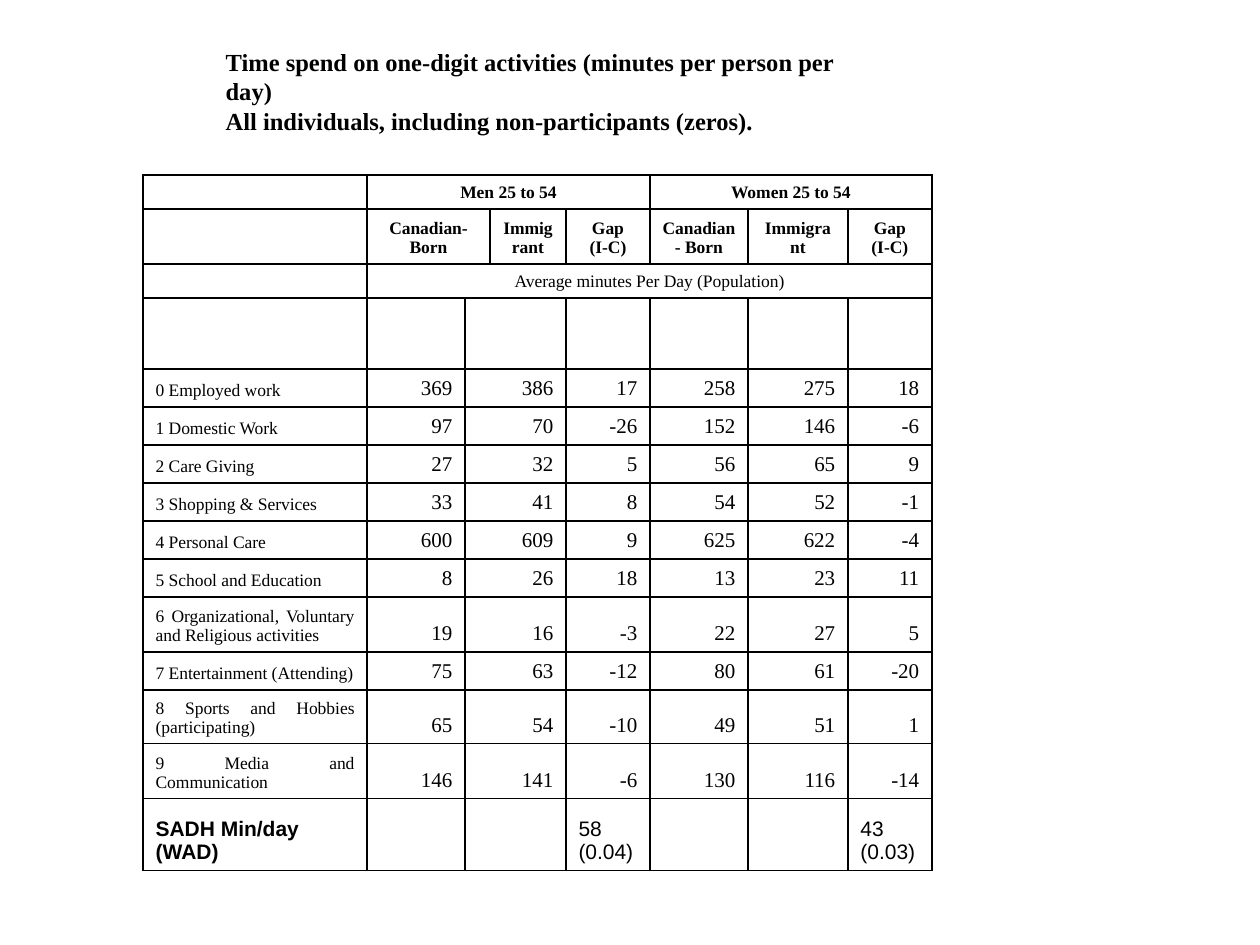
from lxml import etree
from pptx import Presentation
from pptx.dml.color import RGBColor
from pptx.enum.text import MSO_ANCHOR, MSO_AUTO_SIZE, PP_ALIGN
from pptx.oxml.ns import qn
from pptx.util import Pt

PX = 914400 // 126
BLACK = RGBColor(0x00, 0x00, 0x00)
SERIF, SANS = "Times New Roman", "Arial"
LEFT, CENTER, RIGHT, JUSTIFY = PP_ALIGN.LEFT, PP_ALIGN.CENTER, PP_ALIGN.RIGHT, PP_ALIGN.JUSTIFY

COL_WIDTHS = [224, 98, 25, 76, 84, 98, 100, 84]
ROW_HEIGHTS = [33, 55, 34, 71] + [38] * 6 + [55, 38, 54, 55, 72]
VALUE_COLS = [1, 2, 4, 5, 6, 7]
ACTIVITIES = [
    ("0 Employed work", 369, 386, 17, 258, 275, 18),
    ("1 Domestic Work", 97, 70, -26, 152, 146, -6),
    ("2 Care Giving", 27, 32, 5, 56, 65, 9),
    ("3 Shopping & Services", 33, 41, 8, 54, 52, -1),
    ("4 Personal Care", 600, 609, 9, 625, 622, -4),
    ("5 School and Education", 8, 26, 18, 13, 23, 11),
    ("6 Organizational, Voluntary and Religious activities", 19, 16, -3, 22, 27, 5),
    ("7 Entertainment (Attending)", 75, 63, -12, 80, 61, -20),
    ("8 Sports and Hobbies (participating)", 65, 54, -10, 49, 51, 1),
    ("9 Media and Communication", 146, 141, -6, 130, 116, -14),
]
FIRST = 4
LAST = FIRST + len(ACTIVITIES)


def write(tf, text, size=10, bold=False, font=SERIF, align=CENTER, before=0):
    """Fill a text frame, one paragraph for each line of text."""
    for i, line in enumerate(text.split("\n")):
        p = tf.paragraphs[0] if i == 0 else tf.add_paragraph()
        p.alignment = align
        p.space_before = Pt(before)
        r = p.add_run()
        r.text = line
        r.font.size = Pt(size)
        r.font.bold = bold
        r.font.name = font
        r.font.color.rgb = BLACK


def add_borders(cell):
    tc_pr = cell._tc.get_or_add_tcPr()
    for i, side in enumerate(("lnL", "lnR", "lnT", "lnB")):
        ln = etree.Element(qn("a:" + side), w=str(Pt(1)))
        fill = etree.SubElement(ln, qn("a:solidFill"))
        etree.SubElement(fill, qn("a:srgbClr"), val=str(BLACK))
        tc_pr.insert(i, ln)


prs = Presentation()
prs.slide_width, prs.slide_height = 1260 * PX, 945 * PX
s = prs.slides.add_slide(prs.slide_layouts[5])

title = s.shapes.title
title.left, title.top, title.width, title.height = 213 * PX, 55 * PX, 685 * PX, 110 * PX
tf = title.text_frame
tf.word_wrap = True
tf.auto_size = MSO_AUTO_SIZE.NONE
tf.vertical_anchor = MSO_ANCHOR.MIDDLE
tf.margin_right = 18 * PX
tf.margin_bottom = 44 * PX
write(tf, "Time spend on one-digit activities (minutes per person per day)\n"
      "All individuals, including non-participants (zeros).",
      size=14, bold=True, align=LEFT)

table = s.shapes.add_table(len(ROW_HEIGHTS), len(COL_WIDTHS), 143 * PX, 175 * PX,
                           sum(COL_WIDTHS) * PX, sum(ROW_HEIGHTS) * PX).table
table.first_row = False
table.horz_banding = False
for col, width in zip(table.columns, COL_WIDTHS):
    col.width = width * PX
for row, height in zip(table.rows, ROW_HEIGHTS):
    row.height = height * PX

# Merged cells: (row, first column, last column)
merges = [(0, 1, 4), (0, 5, 7), (1, 1, 2), (2, 1, 7)]
merges += [(row, 2, 3) for row in range(3, len(ROW_HEIGHTS))]
for row, first, last in merges:
    table.cell(row, first).merge(table.cell(row, last))

for cell in table.iter_cells():
    cell.fill.background()
    cell.vertical_anchor = MSO_ANCHOR.BOTTOM
    add_borders(cell)

headers = [(0, 1, "Men 25 to 54"), (0, 5, "Women 25 to 54"),
           (1, 1, "Canadian- Born"), (1, 3, "Immigrant"), (1, 4, "Gap\n(I-C)"),
           (1, 5, "Canadian- Born"), (1, 6, "Immigrant"), (1, 7, "Gap\n(I-C)")]
for row, col, text in headers:
    write(table.cell(row, col).text_frame, text, bold=True)
write(table.cell(2, 1).text_frame, "Average minutes Per Day (Population)")

for row, (activity, *minutes) in enumerate(ACTIVITIES, FIRST):
    write(table.cell(row, 0).text_frame, activity, align=JUSTIFY)
    for col, value in zip(VALUE_COLS, minutes):
        write(table.cell(row, col).text_frame, str(value), size=12, align=RIGHT)

for col, text in [(0, "SADH Min/day (WAD)"), (4, "58 (0.04)"), (7, "43 (0.03)")]:
    write(table.cell(LAST, col).text_frame, text, size=12, bold=col == 0,
          font=SANS, align=LEFT, before=2.4)

# Empty cells need a small font so that they do not stretch their rows
for cell in table.iter_cells():
    if not cell.text_frame.text:
        end = etree.SubElement(cell.text_frame.paragraphs[0]._p, qn("a:endParaRPr"))
        end.set("sz", "1000")

prs.save("out.pptx")
